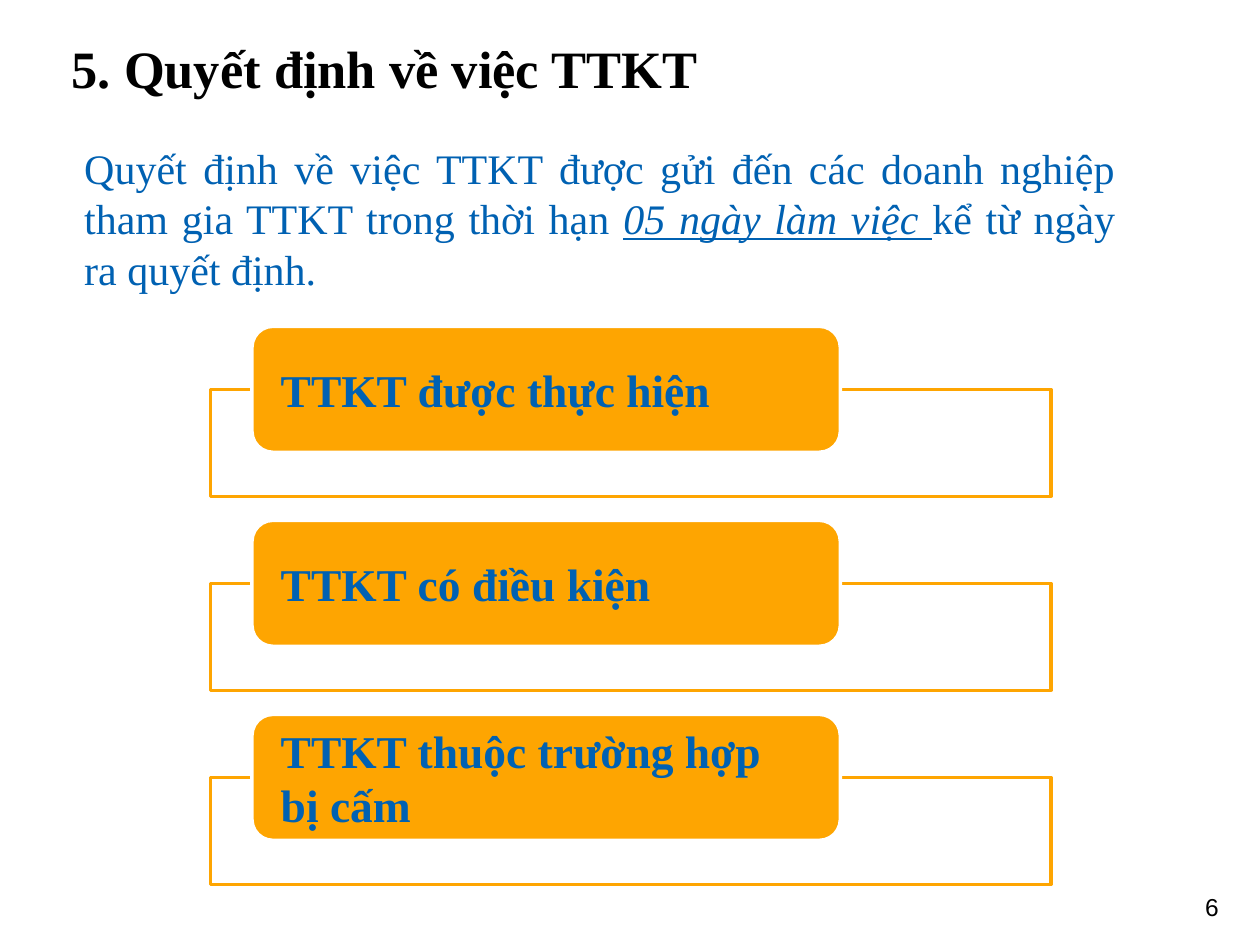
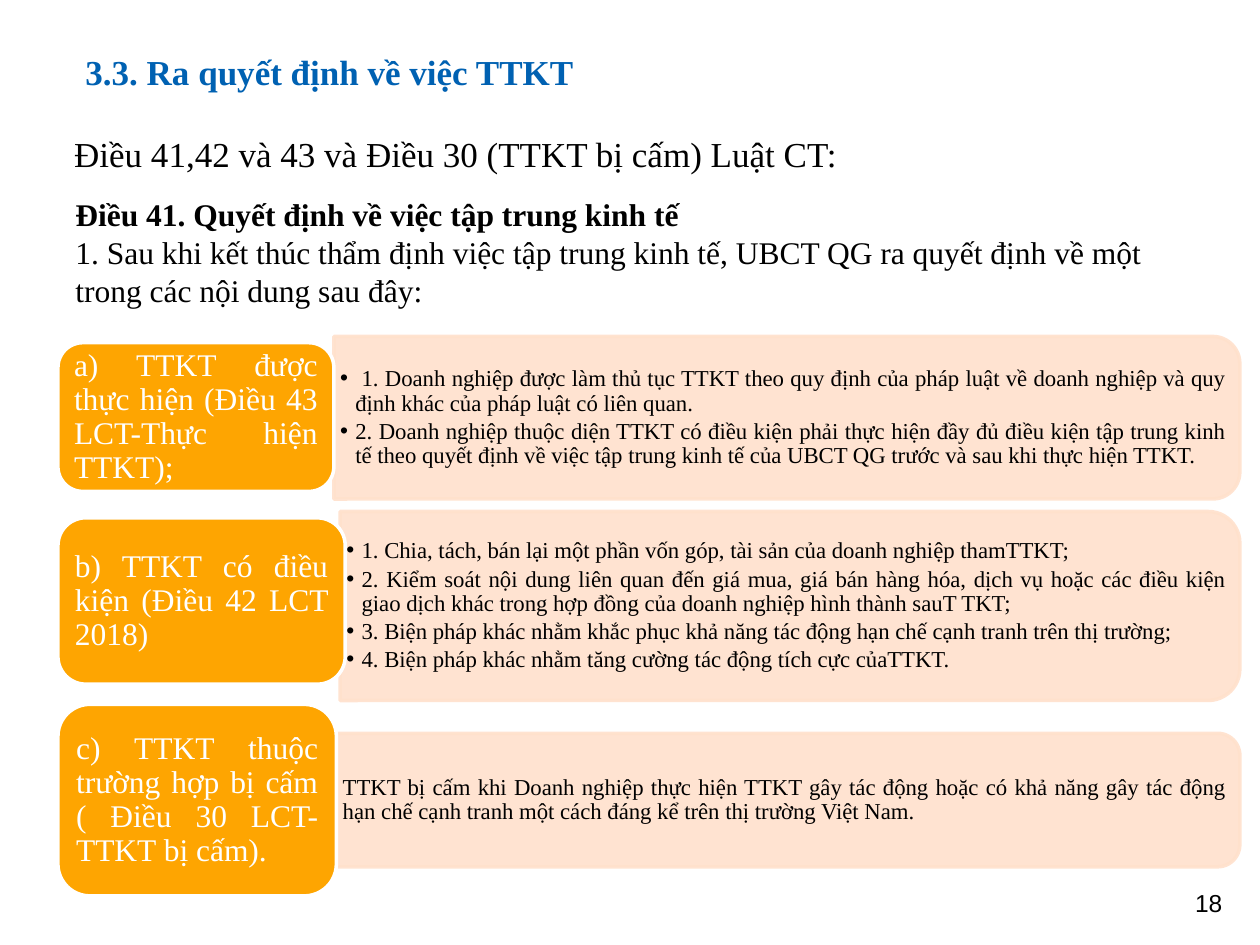
from lxml import etree
from pptx import Presentation
from pptx.dml.color import RGBColor
from pptx.enum.shapes import MSO_SHAPE
from pptx.enum.text import MSO_ANCHOR, PP_ALIGN
from pptx.oxml.ns import qn
from pptx.util import Inches, Pt

RECTANGLE = MSO_SHAPE.RECTANGLE
ROUNDED = MSO_SHAPE.ROUNDED_RECTANGLE
TOP_ROUNDED = MSO_SHAPE.ROUND_2_SAME_RECTANGLE
TOP, MIDDLE = MSO_ANCHOR.TOP, MSO_ANCHOR.MIDDLE
LEFT, RIGHT, JUSTIFY = PP_ALIGN.LEFT, PP_ALIGN.RIGHT, PP_ALIGN.JUSTIFY

SERIF, SANS = "Times New Roman", "Arial"
BLACK, WHITE, BLUE = "000000", "FFFFFF", "0061B2"
ORANGE, PEACH = "FEA501", "FFE1CC"
PANEL_RIGHT = 9.84


def color(hex_value):
    return RGBColor.from_string(hex_value)


def set_indent(paragraph, margin, bullet):
    """Indent a paragraph; with a bullet, the first line hangs by the margin."""
    properties = paragraph._p.get_or_add_pPr()
    properties.set("marL", str(Inches(margin)))
    properties.set("indent", str(-Inches(margin) if bullet else 0))
    if bullet:
        font = etree.SubElement(properties, qn("a:buFont"))
        font.set("typeface", SANS)
        etree.SubElement(properties, qn("a:buChar")).set("char", bullet)


def write(shape, paragraphs, size=18, font=SERIF, fill=BLACK, bold=False,
          align=LEFT, anchor=TOP, insets=(0.1, 0.05), line_spacing=None,
          space_after=0, margin=0, bullet=None):
    """Fill a shape; a paragraph is a string or a list of (text, font changes)."""
    frame = shape.text_frame
    frame.word_wrap = True
    frame.vertical_anchor = anchor
    frame.margin_left = frame.margin_right = Inches(insets[0])
    frame.margin_top = frame.margin_bottom = Inches(insets[1])
    for index, content in enumerate(paragraphs):
        paragraph = frame.add_paragraph() if index else frame.paragraphs[0]
        paragraph.alignment = align
        paragraph.line_spacing = line_spacing
        paragraph.space_after = Pt(space_after)
        set_indent(paragraph, margin, bullet)
        runs = [(content, {})] if isinstance(content, str) else content
        for text, changes in runs:
            run = paragraph.add_run()
            run.text = text
            run.font.name = font
            run.font.size = Pt(size)
            run.font.bold = bold
            run.font.color.rgb = color(fill)
            for name, value in changes.items():
                setattr(run.font, name, value)


class Deck:
    def __init__(self):
        self.presentation = Presentation()
        self.presentation.slide_width = Inches(10)
        self.presentation.slide_height = Inches(7.5)
        self.slide = None

    def add_slide(self, number, number_left, number_top):
        layout = self.presentation.slide_layouts[6]
        self.slide = self.presentation.slides.add_slide(layout)
        self.text(number_left, number_top, 0.55, 0.33, [number],
                  size=14, font=SANS, align=RIGHT)

    def text(self, left, top, width, height, paragraphs, **style):
        box = self.slide.shapes.add_textbox(
            Inches(left), Inches(top), Inches(width), Inches(height))
        write(box, paragraphs, **style)

    def title(self, left, top, width, height, text, **style):
        self.text(left, top, width, height, [text], bold=True,
                  anchor=MIDDLE, line_spacing=0.9, **style)

    def shape(self, kind, left, top, width, height, fill, line):
        shape = self.slide.shapes.add_shape(
            kind, Inches(left), Inches(top), Inches(width), Inches(height))
        shape.shadow.inherit = False
        shape.fill.solid()
        shape.fill.fore_color.rgb = color(fill)
        shape.line.color.rgb = color(line)
        shape.line.width = Pt(2)
        return shape

    def label(self, left, top, width, height, paragraphs, **style):
        label = self.shape(ROUNDED, left, top, width, height, ORANGE, WHITE)
        write(label, paragraphs, anchor=MIDDLE, **style)

    def panel(self, left, top, height, paragraphs, bullet):
        """Draw a translucent panel rounded on its right side, with its text."""
        width = PANEL_RIGHT - left
        offset = (width - height) / 2
        panel = self.shape(TOP_ROUNDED, left + offset, top - offset,
                           height, width, PEACH, PEACH)
        panel.rotation = 90
        for tint in panel._element.spPr.iter(qn("a:srgbClr")):
            etree.SubElement(tint, qn("a:alpha")).set("val", "90000")
        self.text(left, top, width - 0.07, height, paragraphs, size=13,
                  align=JUSTIFY, anchor=MIDDLE, insets=(0.05, 0.03),
                  line_spacing=0.9, space_after=2, margin=0.12, bullet=bullet)


def build_decision_types(deck):
    deck.add_slide("6", 9.22, 7.03)
    deck.title(0.47, 0.19, 9, 0.76, "5. Quyết định về việc TTKT", size=30)
    deck.text(0.5, 1.08, 8.45, 1.4, [[
        ("Quyết định về việc TTKT được gửi đến các doanh nghiệp tham gia TTKT "
         "trong thời hạn ", {}),
        ("05 ngày làm việc ", {"italic": True, "underline": True}),
        ("kể từ ngày ra quyết định.", {}),
    ]], size=24, fill=BLUE, align=JUSTIFY, margin=0.07)

    decisions = [
        ["TTKT được thực hiện"],
        ["TTKT có điều kiện"],
        ["TTKT thuộc trường hợp", "bị cấm"],
    ]
    for index, lines in enumerate(decisions):
        top = 2.59 + 1.54 * index
        deck.shape(RECTANGLE, 1.67, top + 0.5, 6.67, 0.85, WHITE, ORANGE)
        deck.label(2, top, 4.67, 1, lines, size=26, fill=BLUE, bold=True,
                   insets=(0.18, 0))


def build_decision_articles(deck):
    deck.add_slide("18", 9.25, 7)
    deck.title(0.58, 0.25, 8.5, 0.67, "3.3. Ra quyết định về việc TTKT",
               size=20, fill=BLUE)
    deck.text(0.42, 1, 8.45, 0.5,
              ["Điều 41,42 và 43 và Điều 30 (TTKT bị cấm) Luật CT:"],
              size=20, margin=0.07)
    deck.text(0.5, 1.5, 8.83, 1.31, [
        [("Điều 41. Quyết định về việc tập trung kinh tế", {"bold": True})],
        "1. Sau khi kết thúc thẩm định việc tập trung kinh tế, UBCT QG ra "
        "quyết định về một trong các nội dung sau đây:",
    ])

    # Each row: panel (left, top, height), label (top, width, height), texts
    rows = [
        ((2.65, 2.67, 1.29), (2.72, 2.19, 1.18),
         "a) TTKT được thực hiện (Điều 43 LCT-Thực hiện TTKT);", "•", [
             [(" ", {"bold": True}),
              ("1. Doanh nghiệp được làm thủ tục TTKT theo quy định của pháp "
               "luật về doanh nghiệp và quy định khác của pháp luật có liên "
               "quan.", {})],
             "2. Doanh nghiệp thuộc diện TTKT có điều kiện phải thực hiện đầy "
             "đủ điều kiện tập trung kinh tế theo quyết định về việc tập trung "
             "kinh tế của UBCT QG trước và sau khi thực hiện TTKT."]),
        ((2.7, 4.06, 1.5), (4.11, 2.28, 1.32),
         "b) TTKT có điều kiện (Điều 42 LCT 2018)", "•", [
             "1. Chia, tách, bán lại một phần vốn góp, tài sản của doanh nghiệp "
             "thamTTKT;",
             "2. Kiểm soát nội dung liên quan đến giá mua, giá bán hàng hóa, "
             "dịch vụ hoặc các điều kiện giao dịch khác trong hợp đồng của "
             "doanh nghiệp hình thành sauT TKT;",
             "3. Biện pháp khác nhằm khắc phục khả năng tác động hạn chế cạnh "
             "tranh trên thị trường;",
             "4. Biện pháp khác nhằm tăng cường tác động tích cực củaTTKT."]),
        ((2.55, 5.82, 1.06), (5.59, 2.21, 1.52),
         "c) TTKT thuộc trường hợp bị cấm ( Điều 30 LCT- TTKT bị cấm).", None, [
             "TTKT bị cấm khi Doanh nghiệp thực hiện TTKT gây tác động hoặc có "
             "khả năng gây tác động hạn chế cạnh tranh một cách đáng kể trên "
             "thị trường Việt Nam."]),
    ]
    for panel_place, label_place, heading, bullet, details in rows:
        deck.panel(*panel_place, details, bullet)
        deck.label(0.46, *label_place, [heading], fill=WHITE, align=JUSTIFY,
                   insets=(0.07, 0.04), line_spacing=0.9)


def main():
    deck = Deck()
    build_decision_types(deck)
    build_decision_articles(deck)
    deck.presentation.save("out.pptx")


if __name__ == "__main__":
    main()
